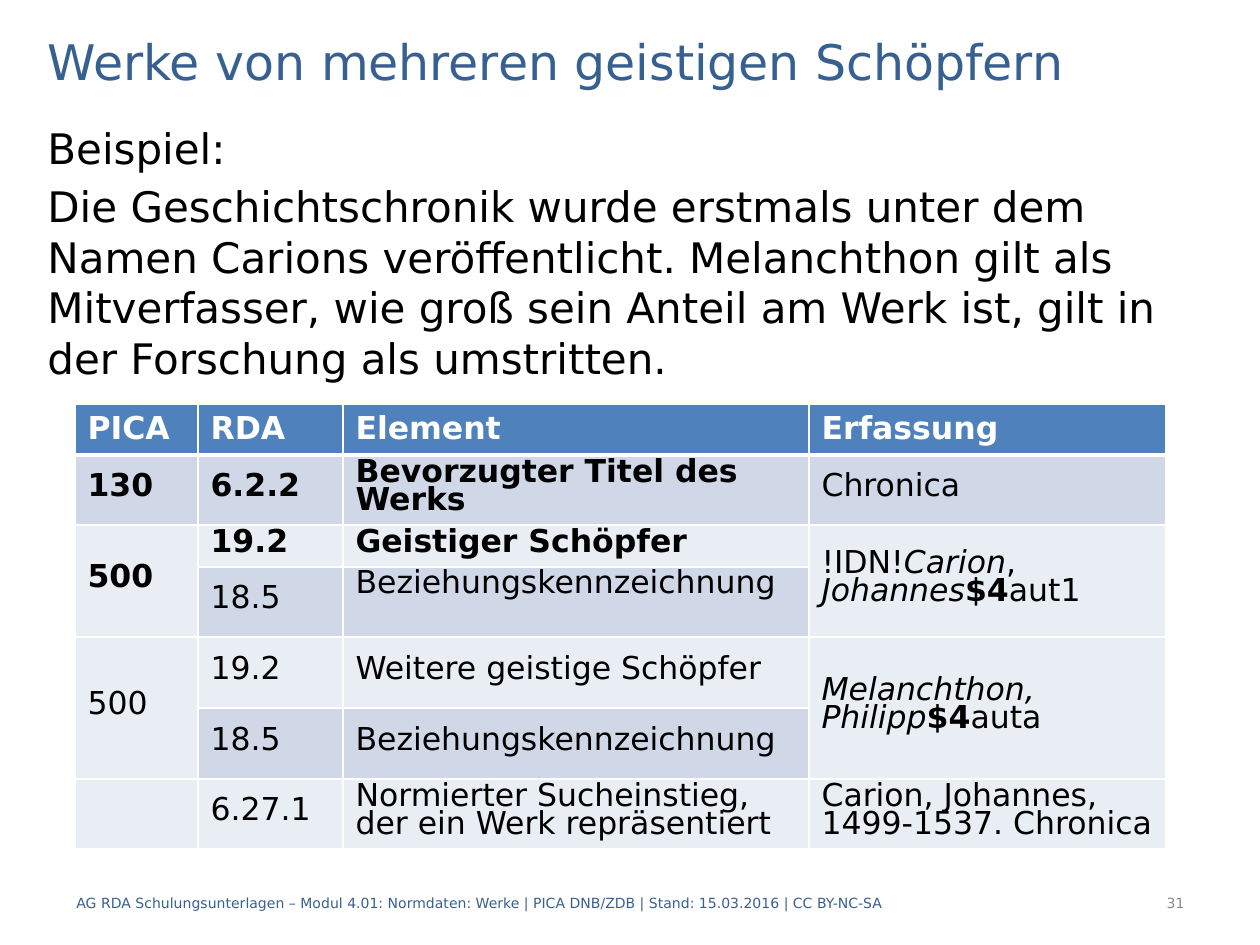
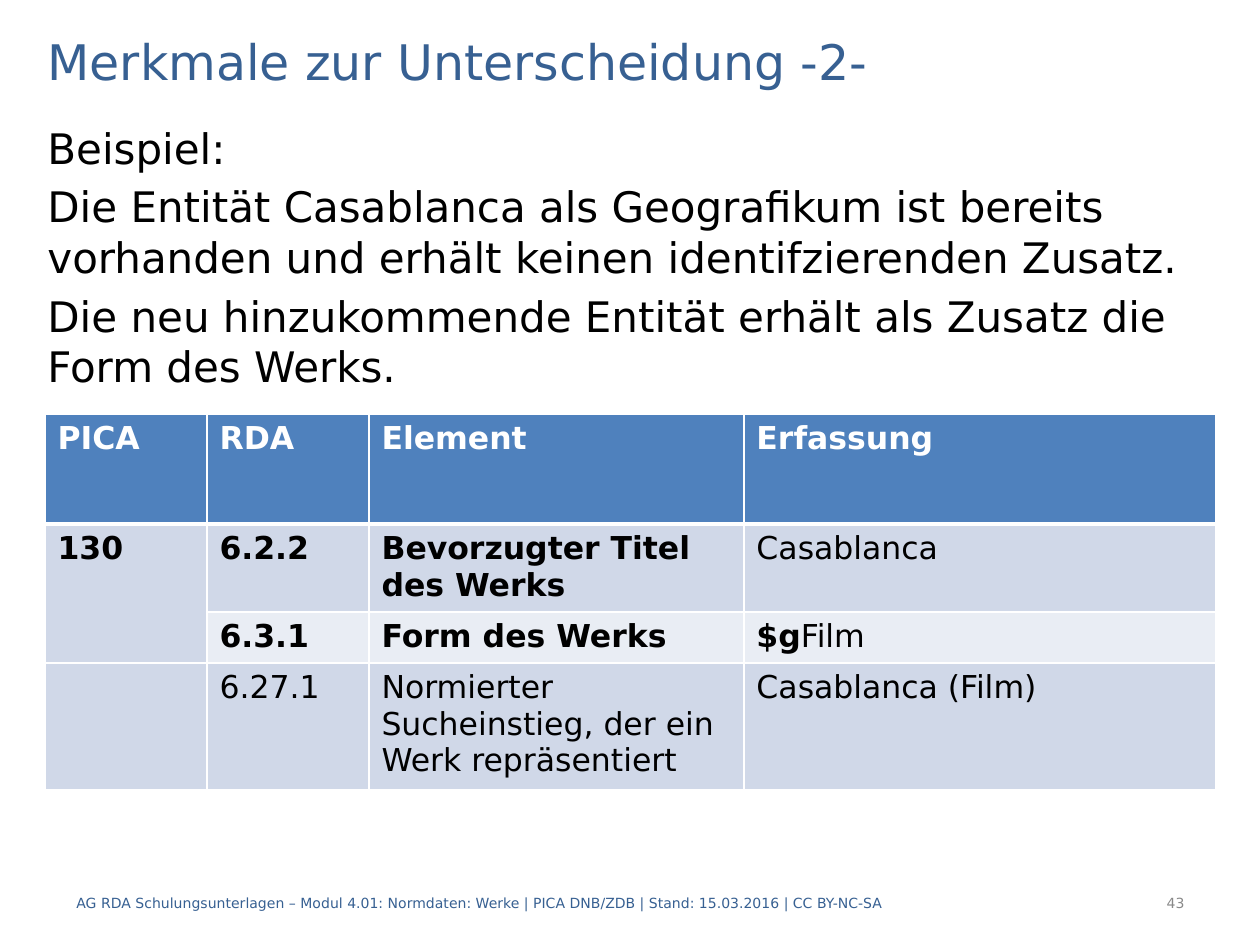
import pptx
import pptx.dml.color
import pptx.enum.text
import pptx.oxml.ns
import pptx.util
import lxml.etree

COLORS = {
    "title": "376092",
    "text": "000000",
    "number": "898989",
    "header": "4F81BD",
    "band_dark": "D0D8E8",
    "band_light": "E9EDF4",
    "white": "FFFFFF",
}
FONT = "DejaVu Sans"
PX_PER_INCH = 126
FOOTER = ("AG RDA Schulungsunterlagen – Modul 4.01: Normdaten: Werke | "
          "PICA DNB/ZDB | Stand: 15.03.2016 | CC BY-NC-SA")
HEADINGS = ["PICA", "RDA", "Element", "Erfassung"]
ACCESS_POINT = "Normierter Sucheinstieg, der ein Werk repräsentiert"
ALIGN = pptx.enum.text.PP_ALIGN
ANCHOR = pptx.enum.text.MSO_ANCHOR


def px(length):
    return pptx.util.Emu(round(length * 914400 / PX_PER_INCH))


def rgb(name):
    return pptx.dml.color.RGBColor.from_string(COLORS[name])


def bold(text):
    return [(text, "bold")]


class SlideBuilder:
    def __init__(self):
        self.deck = pptx.Presentation()
        self.deck.slide_width = px(1260)
        self.deck.slide_height = px(945)
        self.page = None

    def start(self, title):
        self.page = self.deck.slides.add_slide(self.deck.slide_layouts[5])
        box = self.page.shapes.title
        box.left, box.top, box.width, box.height = map(px, (35, 25, 1191, 71))
        frame = box.text_frame
        frame.auto_size = pptx.enum.text.MSO_AUTO_SIZE.NONE
        frame.word_wrap = True
        frame.vertical_anchor = ANCHOR.MIDDLE
        self.add_spans(frame.paragraphs[0], title, 28, "title")

    def add_spans(self, para, content, size, color):
        para.alignment = para.alignment or ALIGN.LEFT
        runs = [(content, "plain")] if isinstance(content, str) else content
        for text, style in runs:
            span = para.add_run()
            span.text = text
            span.font.name = FONT
            span.font.size = pptx.util.Pt(size)
            span.font.bold = style == "bold"
            span.font.italic = style == "italic"
            span.font.color.rgb = rgb(color)

    def text(self, area, lines, size, color, align=ALIGN.LEFT, anchor=ANCHOR.MIDDLE):
        box = self.page.shapes.add_textbox(*map(px, area))
        frame = box.text_frame
        frame.word_wrap = True
        frame.vertical_anchor = anchor
        for index, line in enumerate(lines):
            para = frame.add_paragraph() if index else frame.paragraphs[0]
            para.alignment = align
            para.space_before = pptx.util.Pt(size * 0.2)
            self.add_spans(para, line, size, color)

    def body(self, lines):
        self.text((35, 116, 1191, 753), lines, 24, "text", anchor=ANCHOR.TOP)

    def footer(self, number):
        self.text((997, 878, 200, 50), [str(number)], 8, "number", ALIGN.RIGHT)
        self.text((64, 878, 983, 50), [FOOTER], 8, "title")

    def borders(self, cell, top, bottom):
        properties = cell._tc.get_or_add_tcPr()
        for side, width in (("L", 1), ("R", 1), ("T", top), ("B", bottom)):
            line = lxml.etree.SubElement(properties, pptx.oxml.ns.qn(f"a:ln{side}"),
                                         w=str(pptx.util.Pt(width)))
            fill = lxml.etree.SubElement(line, pptx.oxml.ns.qn("a:solidFill"))
            lxml.etree.SubElement(fill, pptx.oxml.ns.qn("a:srgbClr"), val=COLORS["white"])

    def table(self, left, top, widths, heights, rows, compact=False, top_cells=()):
        rows = [[bold(heading) for heading in HEADINGS]] + rows
        table = self.page.shapes.add_table(
            len(rows), len(widths), px(left), px(top), px(sum(widths)), px(sum(heights))).table
        for column, width in zip(table.columns, widths):
            column.width = px(width)
        for row, height in zip(table.rows, heights):
            row.height = px(height)
        for r, row in enumerate(rows):
            for c, content in enumerate(row):
                cell = table.cell(r, c)
                self.borders(cell, 3 if r == 1 else 1, 1 if r else 3)
                cell.fill.solid()
                band = "band_dark" if r % 2 else "band_light"
                cell.fill.fore_color.rgb = rgb(band if r else "header")
                if content is None:
                    table.cell(r - 1, c).merge(cell)
                    continue
                para = cell.text_frame.paragraphs[0]
                if compact and r:
                    middle = (r, c) not in top_cells
                    cell.vertical_anchor = ANCHOR.MIDDLE if middle else ANCHOR.TOP
                    para.line_spacing = pptx.util.Pt(16)
                    para.space_before = para.space_after = pptx.util.Pt(6)
                if content:
                    self.add_spans(para, content, 18, "text" if r else "white")


def main():
    builder = SlideBuilder()

    builder.start("Werke von mehreren geistigen Schöpfern")
    builder.body([
        "Beispiel:",
        "Die Geschichtschronik wurde erstmals unter dem Namen Carions veröffentlicht. "
        "Melanchthon gilt als Mitverfasser, wie groß sein Anteil am Werk ist, gilt in "
        "der Forschung als umstritten.",
    ])
    carion = [("!IDN!", "plain"), ("Carion", "italic"), (", ", "plain"),
              ("Johannes", "italic"), ("$4", "bold"), ("aut1", "plain")]
    melanchthon = [("Melanchthon, Philipp", "italic"), ("$4", "bold"), ("auta", "plain")]
    builder.table(75, 404, [123, 145, 466, 357], [51, 70, 42, 70, 71, 71, 70], [
        [bold("130"), bold("6.2.2"), bold("Bevorzugter Titel des Werks"), "Chronica"],
        [bold("500"), bold("19.2"), bold("Geistiger Schöpfer"), carion],
        [None, "18.5", "Beziehungskennzeichnung", None],
        ["500", "19.2", "Weitere geistige Schöpfer", melanchthon],
        [None, "18.5", "Beziehungskennzeichnung", None],
        ["", "6.27.1", ACCESS_POINT, "Carion, Johannes, 1499-1537. Chronica"],
    ], compact=True, top_cells=[(3, 2)])
    builder.footer(31)

    builder.start("Merkmale zur Unterscheidung -2-")
    builder.body([
        "Beispiel:",
        "Die Entität Casablanca als Geografikum ist bereits vorhanden und erhält keinen "
        "identifzierenden Zusatz.",
        "Die neu hinzukommende Entität erhält als Zusatz die Form des Werks.",
    ])
    builder.table(45, 414, [162, 162, 375, 472], [110, 86, 51, 122], [
        [bold("130"), bold("6.2.2"), bold("Bevorzugter Titel des Werks"), "Casablanca"],
        [None, bold("6.3.1"), bold("Form des Werks"), [("$g", "bold"), ("Film", "plain")]],
        ["", "6.27.1", ACCESS_POINT, "Casablanca (Film)"],
    ])
    builder.footer(43)

    builder.deck.save("out.pptx")


if __name__ == "__main__":
    main()
